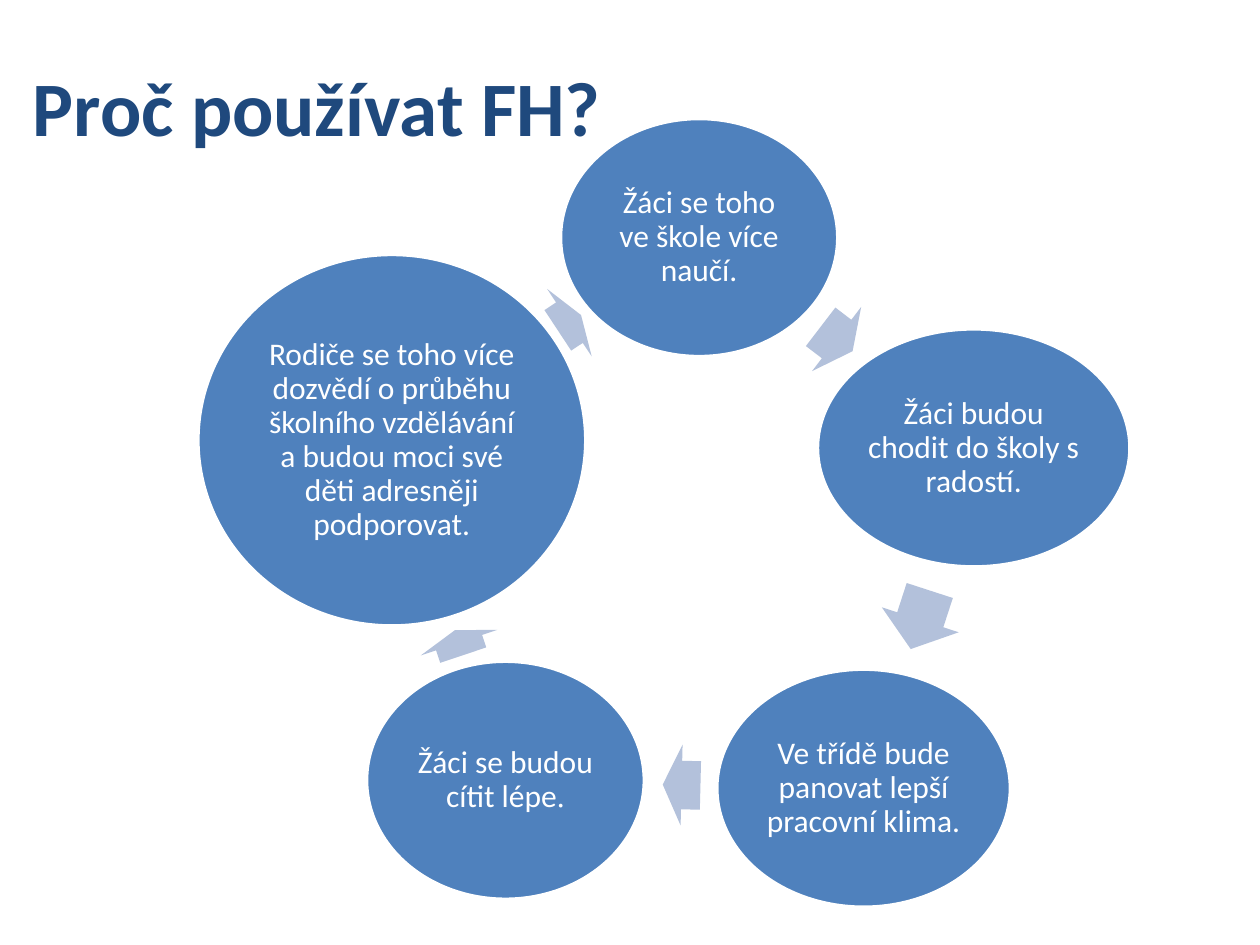
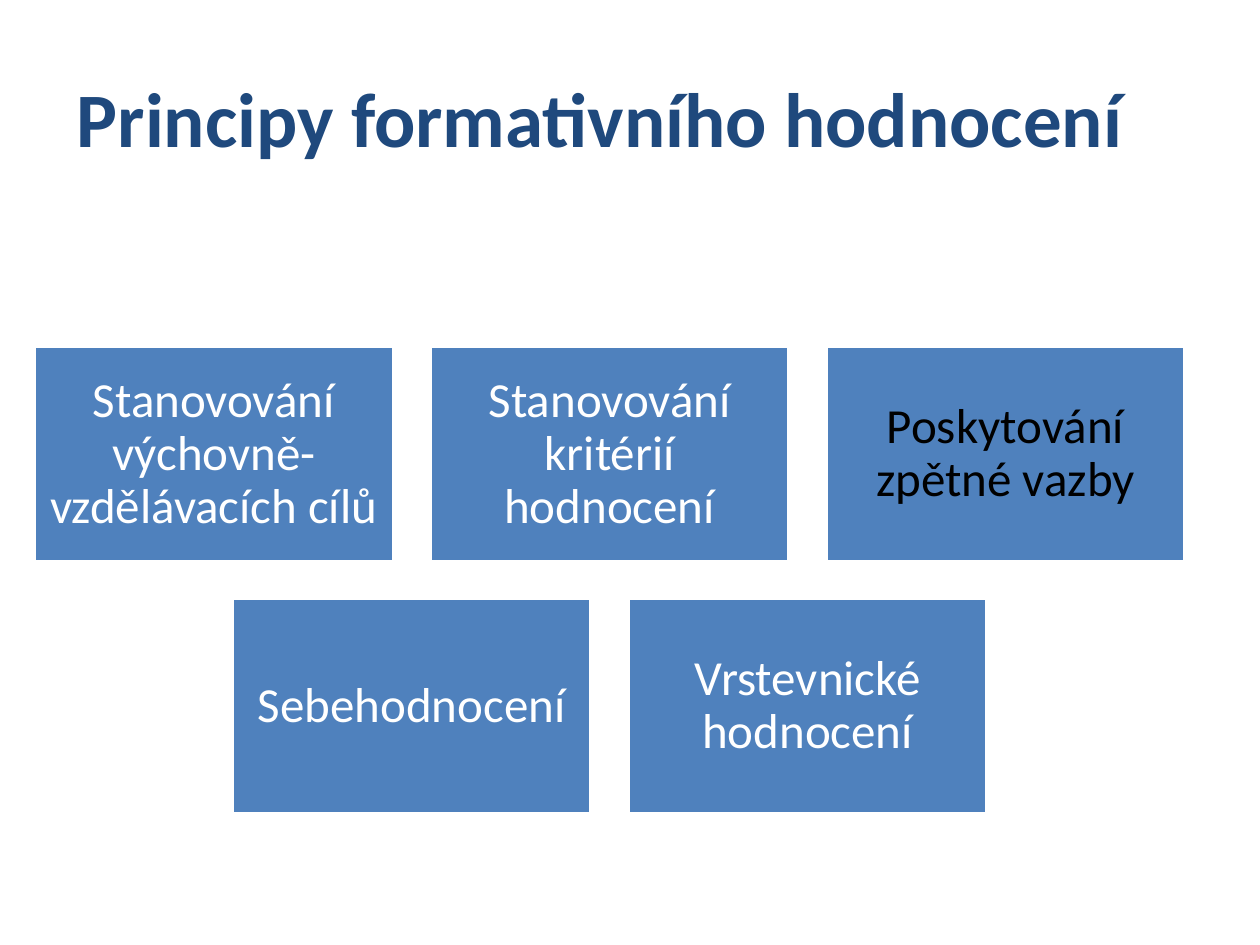
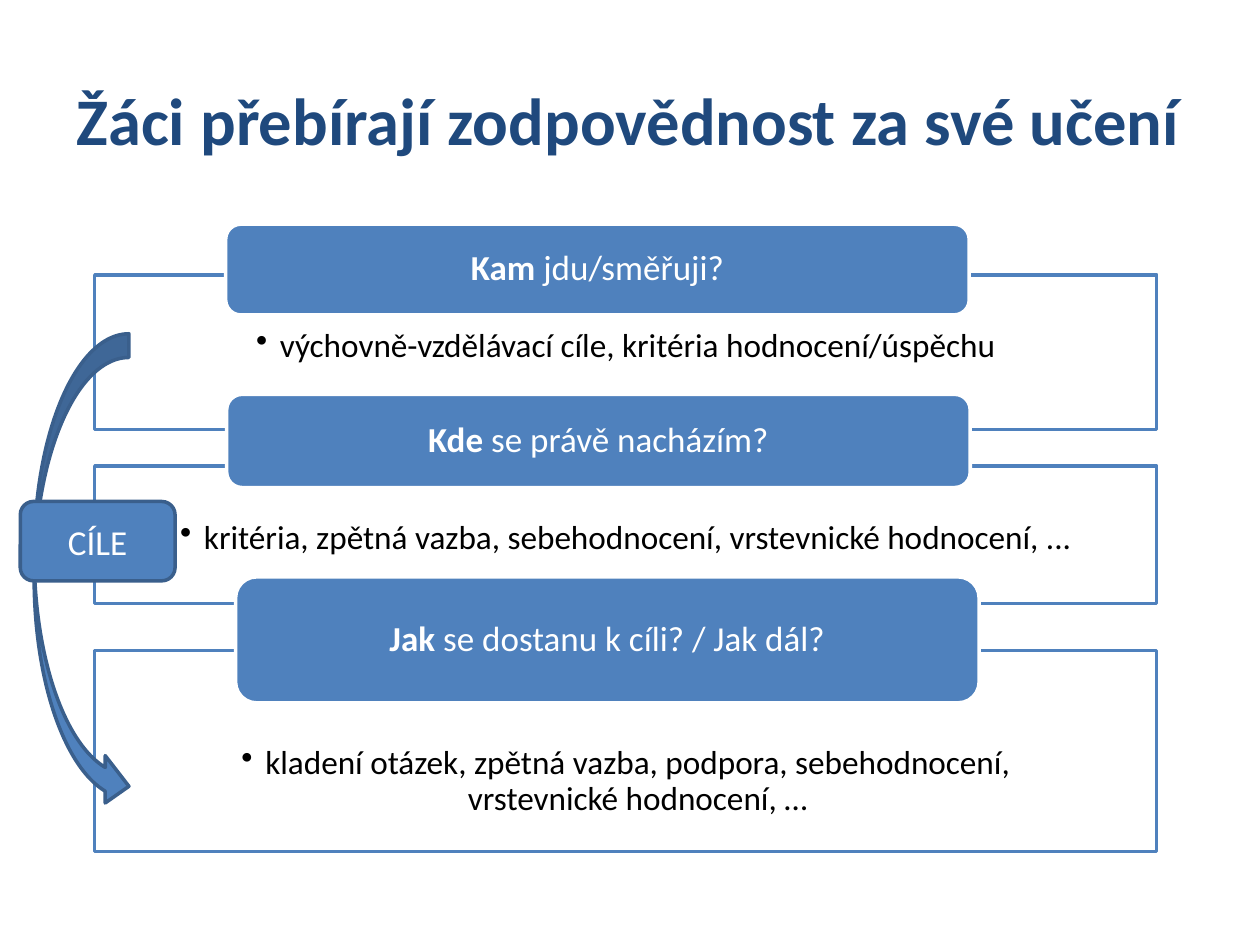
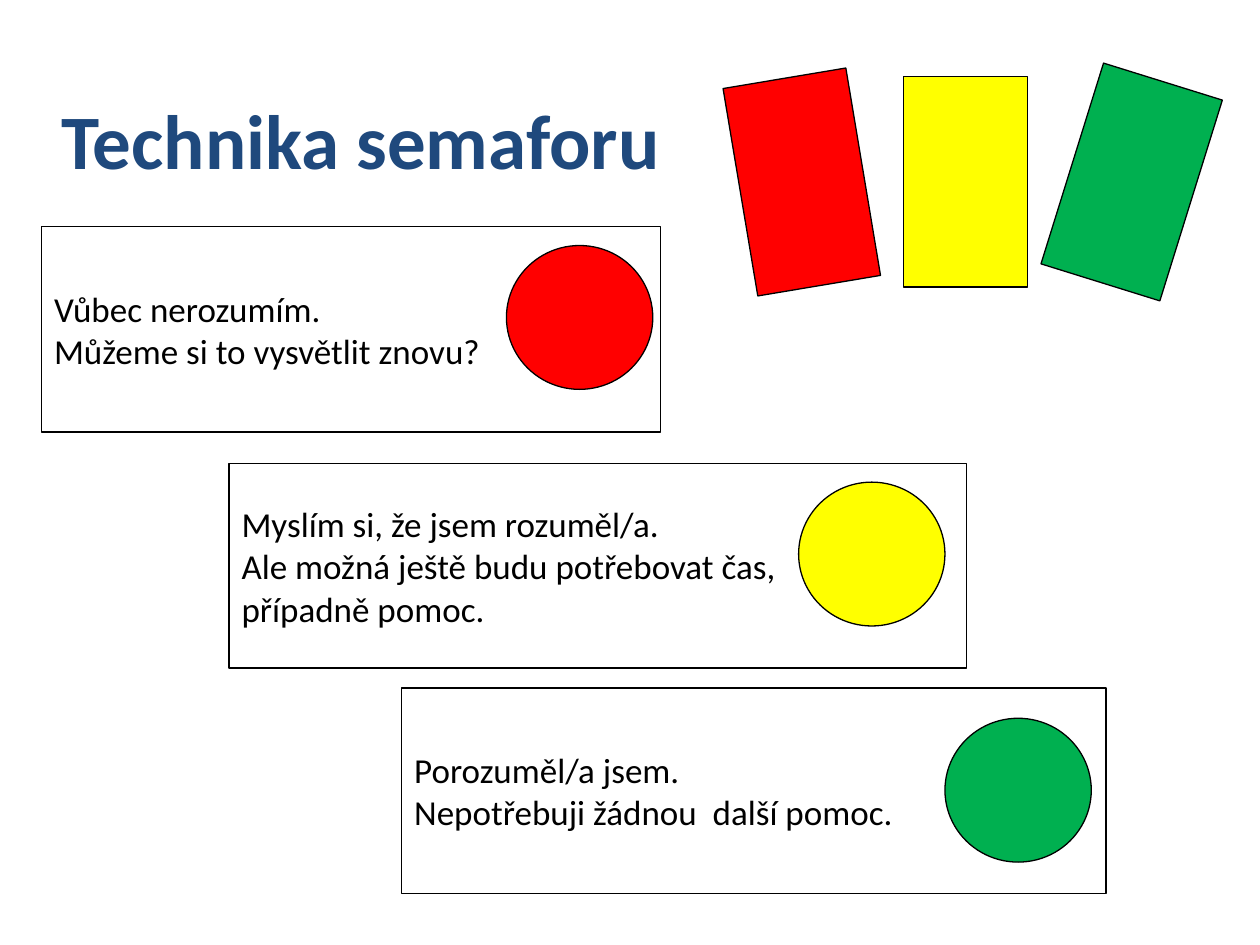
"""Build four slides on formative assessment."""
from dataclasses import dataclass, replace
from typing import NamedTuple

from lxml.etree import SubElement
from pptx import Presentation
from pptx.dml.color import RGBColor
from pptx.enum.shapes import MSO_SHAPE as Preset
from pptx.enum.text import MSO_ANCHOR as Anchor, PP_ALIGN as Align
from pptx.oxml.ns import qn
from pptx.shapes.autoshape import Shape
from pptx.slide import Slide
from pptx.text.text import TextFrame
from pptx.util import Cm, Pt

NAVY = RGBColor(0x1F, 0x49, 0x7D)
BLUE = RGBColor(0x4F, 0x81, 0xBD)
DARK_BLUE = RGBColor(0x3A, 0x5F, 0x8C)
PALE_BLUE = RGBColor(0xB3, 0xC1, 0xDB)
WHITE = RGBColor(0xFF, 0xFF, 0xFF)
BLACK = RGBColor(0x00, 0x00, 0x00)
RED = RGBColor(0xFF, 0x00, 0x00)
YELLOW = RGBColor(0xFF, 0xFF, 0x00)
GREEN = RGBColor(0x00, 0xB0, 0x50)
FONT = "Calibri"


class Area(NamedTuple):
    """Left, top, width and height in centimetres."""

    left: float
    top: float
    width: float
    height: float


class Span(NamedTuple):
    """A stretch of text with its own weight or font."""

    text: str
    bold: bool | None = None
    font: str | None = None


@dataclass(frozen=True)
class TextStyle:
    """How the text of a box is set; insets run left, top, right, bottom."""

    size: float
    color: RGBColor = WHITE
    bold: bool = False
    align: Align = Align.CENTER
    anchor: Anchor = Anchor.MIDDLE
    spacing: float = 0.9
    insets: tuple[float, float, float, float] = (0.25, 0.13, 0.25, 0.13)
    bullet: bool = False


@dataclass(frozen=True)
class Look:
    """Fill and outline of a shape; no line colour means no outline."""

    fill: RGBColor
    line: RGBColor | None = None
    weight: float = 2
    opacity: int = 100


class Step(NamedTuple):
    """One ellipse of the cycle and the arrow that leaves it."""

    area: Area
    spans: list[Span]
    arrow: Area
    angle: float


class Question(NamedTuple):
    """A heading over a framed answer."""

    frame: Area
    answer: str
    answer_top: float
    heading: Area
    lead: str
    rest: str


class Signal(NamedTuple):
    """A colour of the traffic light: its card, note and lamp."""

    color: RGBColor
    card_left: float
    angle: float
    note: Area
    lines: list[str]
    lamp_left: float
    lamp_top: float


Lines = list[list[Span]]

SOLID = Look(BLUE, WHITE)
ARROW = Look(PALE_BLUE)
FRAME = Look(WHITE, BLUE, opacity=90)
DARK_EDGE = Look(BLUE, DARK_BLUE)

TITLE = TextStyle(44, NAVY, bold=True, align=Align.LEFT, spacing=1)
CYCLE = TextStyle(18, insets=(0.08,) * 4)
PRINCIPLE = TextStyle(28, insets=(0.3,) * 4)
HEADING = TextStyle(20, insets=(0.56, 0, 0.56, 0))
ANSWER = TextStyle(19, BLACK, anchor=Anchor.TOP, bullet=True)
BADGE = TextStyle(20, spacing=1)
NOTE = TextStyle(20, BLACK, align=Align.LEFT, spacing=1)

STEPS = [
    Step(Area(11.3, 2.39, 5.59, 4.8), [Span("Žáci se toho ve škole více naučí.")],
         Area(16.46, 6.02, 0.81, 1.63), 37.4),
    Step(Area(16.48, 6.63, 6.3, 4.8), [Span("Žáci budou chodit do školy s radostí.")],
         Area(17.93, 11.68, 1.24, 1.63), 108),
    Step(Area(14.45, 13.49, 5.92, 4.8), [Span("Ve třídě bude panovat lepší pracovní klima.")],
         Area(13.36, 15.01, 0.76, 1.63), 181.4),
    Step(Area(7.39, 13.33, 5.6, 4.8),
         [Span("Žáci se budou cítit lépe"), Span(".", font="Times New Roman")],
         Area(8.99, 12.14, 0.53, 1.63), 251.5),
    Step(Area(3.99, 5.13, 7.82, 7.49),
         [Span("Rodiče se toho více dozvědí o průběhu školního vzdělávání "
               "a budou moci své děti adresněji podporovat.")],
         Area(11.2, 5.69, 0.56, 1.63), 326.6),
]

PRINCIPLES = [
    [("Stanovování výchovně-vzdělávacích cílů", WHITE),
     ("Stanovování kritérií hodnocení", WHITE),
     ("Poskytování zpětné vazby", BLACK)],
    [("Sebehodnocení", WHITE), ("Vrstevnické hodnocení", WHITE)],
]

QUESTIONS = [
    Question(Area(1.91, 5.54, 21.41, 3.12),
             "výchovně-vzdělávací cíle, kritéria hodnocení/úspěchu", 1.09,
             Area(4.55, 4.52, 14.99, 1.83), "Kam", " jdu/směřuji?"),
    Question(Area(1.91, 9.4, 21.41, 2.77),
             "kritéria, zpětná vazba, sebehodnocení, vrstevnické hodnocení, ...", 1.09,
             Area(4.57, 7.95, 14.99, 1.88), "Kde", " se právě nacházím?"),
    Question(Area(1.91, 13.11, 21.41, 4.06),
             "kladení otázek, zpětná vazba, podpora, sebehodnocení, vrstevnické hodnocení, …",
             1.93,
             Area(4.75, 11.63, 14.99, 2.54), "Jak", " se dostanu k cíli? / Jak dál?"),
]

SIGNALS = [
    Signal(RED, 14.91, 350.5, Area(0.84, 4.57, 12.47, 4.14),
           ["Vůbec nerozumím.", "Můžeme si to vysvětlit znovu?"], 10.21, 4.95),
    Signal(YELLOW, 18.21, 0, Area(4.62, 9.35, 14.86, 4.12),
           ["Myslím si, že jsem rozuměl/a.", "Ale možná ještě budu potřebovat čas,",
            "případně pomoc."], 16.1, 9.72),
    Signal(GREEN, 21.56, 17.3, Area(8.1, 13.87, 14.2, 4.14),
           ["Porozuměl/a jsem.", "Nepotřebuji žádnou  další pomoc."], 19.05, 14.48),
]


def write(frame: TextFrame, lines: Lines, style: TextStyle) -> None:
    """Fill a text frame with paragraphs in one style."""
    frame.word_wrap = True
    frame.vertical_anchor = style.anchor
    (frame.margin_left, frame.margin_top,
     frame.margin_right, frame.margin_bottom) = map(Cm, style.insets)
    for index, spans in enumerate(lines):
        para = frame.add_paragraph() if index else frame.paragraphs[0]
        para.alignment = style.align
        para.line_spacing = style.spacing
        if style.bullet:
            props = para._p.get_or_add_pPr()
            props.set("marL", str(Cm(0.48)))
            props.set("indent", str(-Cm(0.48)))
            SubElement(props, qn("a:buChar")).set("char", "•")
        para.font.name = FONT
        para.font.size = Pt(style.size)
        para.font.bold = style.bold
        para.font.color.rgb = style.color
        for span in spans:
            run = para.add_run()
            run.text = span.text
            if span.bold is not None:
                run.font.bold = span.bold
            if span.font:
                run.font.name = span.font


def add_box(page: Slide, preset: Preset, area: Area, look: Look, lines: Lines | None = None,
            style: TextStyle = NOTE, angle: float = 0) -> Shape:
    """Draw a preset shape, with text if lines are given."""
    box = page.shapes.add_shape(preset, *map(Cm, area))
    box.shadow.inherit = False
    box.rotation = angle
    box.fill.solid()
    box.fill.fore_color.rgb = look.fill
    if look.opacity < 100:
        color = box._element.spPr.find(qn("a:solidFill"))[0]
        SubElement(color, qn("a:alpha")).set("val", str(look.opacity * 1000))
    if look.line is None:
        box.line.fill.background()
    else:
        box.line.color.rgb = look.line
        box.line.width = Pt(look.weight)
    if lines:
        write(box.text_frame, lines, style)
    return box


def add_page(deck: Presentation, title: str, area: Area, size: float = TITLE.size) -> Slide:
    """Add a blank slide with its title."""
    page = deck.slides.add_slide(deck.slide_layouts[6])
    box = page.shapes.add_textbox(*map(Cm, area))
    write(box.text_frame, [[Span(title)]], replace(TITLE, size=size))
    return page


def add_cycle_page(deck: Presentation) -> None:
    """Show the reasons as a cycle of ellipses."""
    page = add_page(deck, "Proč používat FH?", Area(0.41, 0.58, 19.63, 3.12))
    for step in STEPS:
        add_box(page, Preset.OVAL, step.area, SOLID, [step.spans], CYCLE)
        arrow = add_box(page, Preset.RIGHT_ARROW, step.arrow, ARROW, angle=step.angle)
        arrow.adjustments[0], arrow.adjustments[1] = 0.6, 0.5


def add_principles_page(deck: Presentation) -> None:
    """Show the principles in centred rows of cards."""
    page = add_page(deck, "Principy formativního hodnocení", Area(1.3, 0.53, 22.81, 3.66))
    width, height, gap, middle, top = 7.24, 4.34, 0.74, 12.29, 6.99
    for row, cards in enumerate(PRINCIPLES):
        left = middle - (len(cards) * (width + gap) - gap) / 2
        for column, (label, color) in enumerate(cards):
            area = Area(left + column * (width + gap), top + row * (height + gap), width, height)
            add_box(page, Preset.RECTANGLE, area, SOLID, [[Span(label)]],
                    replace(PRINCIPLE, color=color))


def add_questions_page(deck: Presentation) -> None:
    """Show three questions, their answers and the way to the goals."""
    page = add_page(deck, "Žáci přebírají zodpovědnost za své učení",
                    Area(1.3, 1.12, 23.42, 2.54), 38)
    for question in QUESTIONS:
        style = replace(ANSWER, insets=(1.65, question.answer_top, 1.65, 0.38))
        add_box(page, Preset.RECTANGLE, question.frame, FRAME, [[Span(question.answer)]], style)
        add_box(page, Preset.ROUNDED_RECTANGLE, question.heading, SOLID,
                [[Span(question.lead, bold=True), Span(question.rest)]], HEADING)
    add_box(page, Preset.CURVED_RIGHT_ARROW, Area(0.69, 6.73, 1.91, 9.6), DARK_EDGE)
    add_box(page, Preset.ROUNDED_RECTANGLE, Area(0.41, 10.11, 3.12, 1.6), DARK_EDGE,
            [[Span("CÍLE")]], BADGE)


def add_signals_page(deck: Presentation) -> None:
    """Show the traffic light cards and what each colour says."""
    page = add_page(deck, "Technika semaforu", Area(0.99, 1.57, 17.63, 2.44))
    for signal in SIGNALS:
        look = Look(signal.color, BLACK, 0.75)
        add_box(page, Preset.RECTANGLE, Area(signal.card_left, 1.55, 2.51, 4.24), look,
                angle=signal.angle)
        add_box(page, Preset.RECTANGLE, signal.note, replace(look, fill=WHITE),
                [[Span(line)] for line in signal.lines], NOTE)
        add_box(page, Preset.OVAL, Area(signal.lamp_left, signal.lamp_top, 2.95, 2.9), look)


def main() -> None:
    """Build and save the deck."""
    deck = Presentation()
    deck.slide_width, deck.slide_height = Cm(25.4), Cm(19.05)
    add_cycle_page(deck)
    add_principles_page(deck)
    add_questions_page(deck)
    add_signals_page(deck)
    deck.save("out.pptx")


if __name__ == "__main__":
    main()
